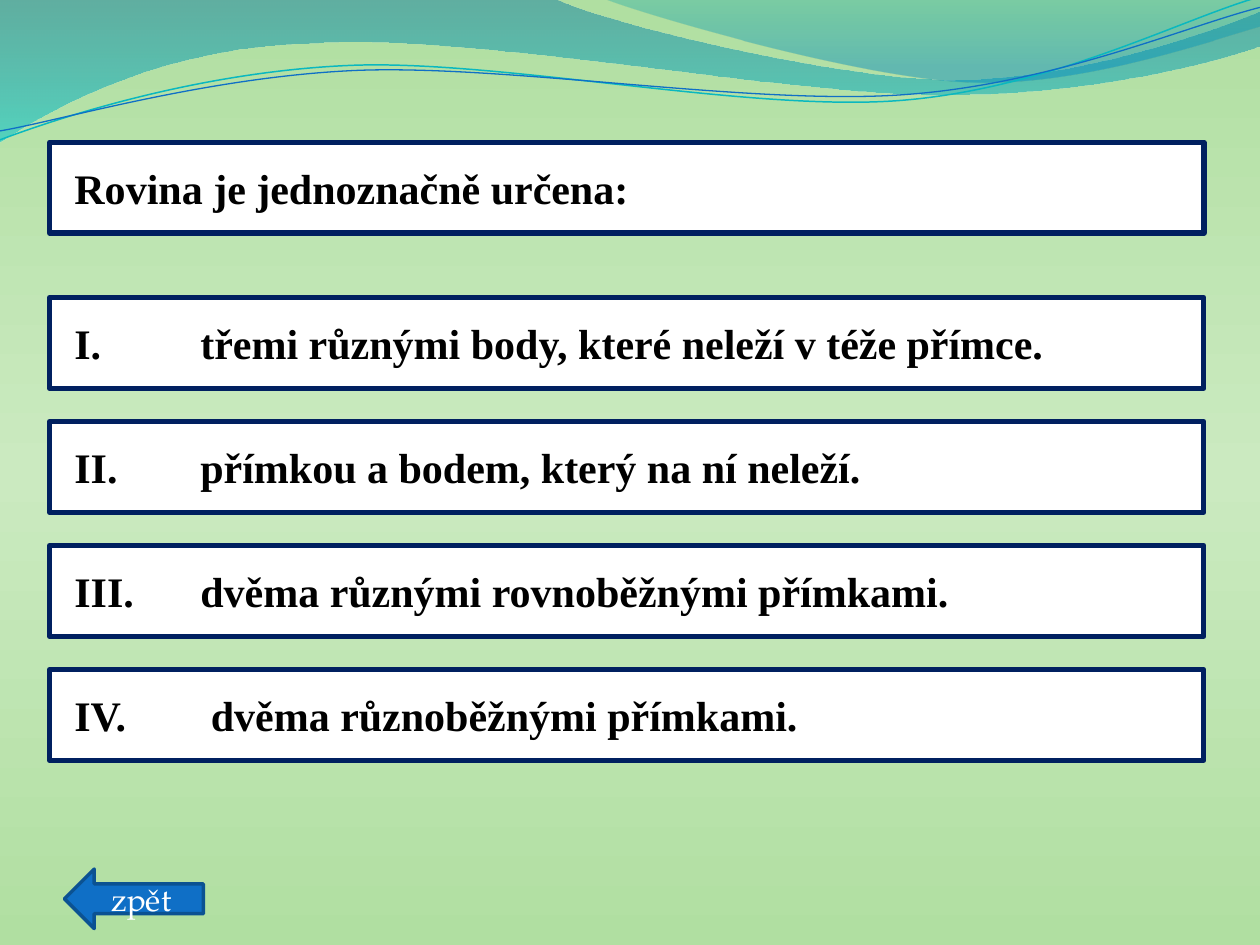
from lxml.etree import SubElement
from pptx import Presentation
from pptx.dml.color import RGBColor
from pptx.enum.shapes import MSO_SHAPE as Shape
from pptx.enum.text import MSO_ANCHOR as Anchor, MSO_AUTO_SIZE as AutoSize, PP_ALIGN as Align
from pptx.oxml.ns import qn
from pptx.util import Cm, Pt

QUESTION = "Rovina je jednoznačně určena:"
ANSWERS = [
    "I.\ttřemi různými body, které neleží v téže přímce.",
    "II.\tpřímkou a bodem, který na ní neleží.",
    "III.\tdvěma různými rovnoběžnými přímkami.",
    "IV.\t dvěma různoběžnými přímkami.",
]

# Each outline is a start point, then steps of one point (line) or three (Bézier curve), in cm.
BANDS = [
    ([(0, 0), [(11.18, -0.03)],
      [(12.09, 0.43), (16.87, 1.6), (19.25, 1.6)],
      [(21.67, 1.6), (24.33, 0.66), (25.4, 0.23)],
      [(25.43, 0.91)],
      [(24.97, 1.12), (22.1, 1.93), (18.95, 1.91)],
      [(15.8, 1.91), (9.7, 0.71), (6.53, 0.86)],
      [(3.28, 0.91), (1.17, 2.11), (-0.03, 2.87)]],
     [(0, "0074A1", 45), (100, "00C6CF", 55)]),
    ([(12.17, -0.03),
      [(12.93, 0.28), (17.32, 1.57), (19.53, 1.65)],
      [(21.74, 1.75), (24.41, 0.81), (25.4, 0.53)],
      [(25.4, 0)]],
     [(0, "00A1A9", 30), (80, "008BBF", 45)]),
]
STRANDS = [
    ([(0, 2.82),
      [(1.22, 2.36), (4.01, 1.45), (7.04, 1.32)],
      [(10.03, 1.19), (15.06, 2.26), (18.11, 2.03)],
      [(21.16, 1.8), (23.83, 0.38), (25.35, -0.05)]],
     "0AB8BF", 0.85),
    ([(0, 2.64),
      [(1.19, 2.44), (4.17, 1.55), (7.19, 1.42)],
      [(10.24, 1.3), (15.16, 2.13), (18.21, 1.91)],
      [(21.23, 1.7), (23.9, 0.53), (25.4, 0.15)]],
     "0F6FC6", 0.75),
]


def color(hex_value):
    return RGBColor.from_string(hex_value)


def paint(shape, fill, line, width):
    shape.fill.solid()
    shape.fill.fore_color.rgb = color(fill)
    shape.line.color.rgb = color(line)
    shape.line.width = Pt(width)


def paint_gradient(fill, owner, stops):
    """Fill downwards with stops of (position %, colour, opacity %)."""
    fill.gradient()
    fill.gradient_angle = 270
    stop_list = owner.find(".//" + qn("a:gsLst"))
    for old_stop in list(stop_list):
        stop_list.remove(old_stop)
    for position, hex_value, opacity in stops:
        stop = SubElement(stop_list, qn("a:gs"), pos=str(position * 1000))
        tone = SubElement(stop, qn("a:srgbClr"), val=hex_value)
        if opacity < 100:
            SubElement(tone, qn("a:alpha"), val=str(opacity * 1000))


def add_outline(page, outline, left, top, close):
    """Join the step ends with lines, then bend the lines that have control points."""
    start, *steps = outline
    builder = page.shapes.build_freeform(Cm(left + start[0]), Cm(top + start[1]))
    builder.add_line_segments([(Cm(left + x), Cm(top + y)) for *_, (x, y) in steps], close=close)
    shape = builder.convert_to_shape()
    shape.shadow.inherit = False
    for line, (*controls, _) in zip(list(shape.element.iter(qn("a:lnTo"))), steps):
        if controls:
            line.tag = qn("a:cubicBezTo")
            for index, (x, y) in enumerate(controls):
                point = SubElement(line, qn("a:pt"), x=str(Cm(left + x) - shape.left),
                                   y=str(Cm(top + y) - shape.top))
                line.insert(index, point)
    return shape


def add_waves(page, left, top):
    for outline, stops in BANDS:
        band = add_outline(page, outline, left, top, True)
        paint_gradient(band.fill, band.element, stops)
        band.line.fill.background()
    for outline, hex_value, width in STRANDS:
        strand = add_outline(page, outline, left, top, False)
        strand.fill.background()
        strand.line.color.rgb = color(hex_value)
        strand.line.width = Pt(width)


def write(shape, text, font_name, size, hex_value, align, bold=False):
    frame = shape.text_frame
    frame.text = text
    frame.word_wrap = True
    frame.auto_size = AutoSize.NONE
    frame.vertical_anchor = Anchor.MIDDLE
    para = frame.paragraphs[0]
    para.alignment = align
    font = para.runs[0].font
    font.name, font.size, font.bold = font_name, Pt(size), bold
    font.color.rgb = color(hex_value)


def format_panel(shape, text):
    paint(shape, "FFFFFF", "002060", 3)
    write(shape, text, "Times New Roman", 24, "000000", Align.LEFT, True)
    frame = shape.text_frame
    frame.margin_left = frame.margin_right = Cm(0.5)
    frame.margin_top = frame.margin_bottom = Cm(0.4)


def place_question(page, left, top, width, height):
    title = page.shapes.title
    title.left, title.top, title.width, title.height = Cm(left), Cm(top), Cm(width), Cm(height)
    format_panel(title, QUESTION)


def add_answers(page, left, top, width, height, pitch=2.5, text_indent=2.54):
    for index, answer in enumerate(ANSWERS):
        panel = page.shapes.add_shape(Shape.RECTANGLE, Cm(left), Cm(top + index * pitch),
                                      Cm(width), Cm(height))
        panel.shadow.inherit = False
        format_panel(panel, answer)
        properties = panel.text_frame.paragraphs[0]._p.get_or_add_pPr()
        tabs = SubElement(properties, qn("a:tabLst"))
        SubElement(tabs, qn("a:tab"), pos=str(Cm(text_indent)), algn="l")


def add_back_arrow(page, left, top, width, height):
    arrow = page.shapes.add_shape(Shape.LEFT_ARROW, Cm(left), Cm(top), Cm(width), Cm(height))
    arrow.shadow.inherit = False
    paint(arrow, "0F6FC6", "0B5292", 2)
    write(arrow, "zpět", "TeX Gyre Pagella", 18, "FFFFFF", Align.CENTER)


def main():
    deck = Presentation()
    deck.slide_width, deck.slide_height = Cm(25.4), Cm(19.05)
    page = deck.slides.add_slide(deck.slide_layouts[5])
    paint_gradient(page.background.fill, page.element,
                   [(0, "B0DFA1", 100), (50, "CBEAC0", 100), (100, "B0DFA1", 100)])
    add_waves(page, 0, 0)
    add_back_arrow(page, 1.3, 17.52, 2.8, 1.2)
    place_question(page, 1, 2.87, 23.27, 1.83)
    add_answers(page, 1, 6, 23.27, 1.83)
    deck.save("out.pptx")


if __name__ == "__main__":
    main()
